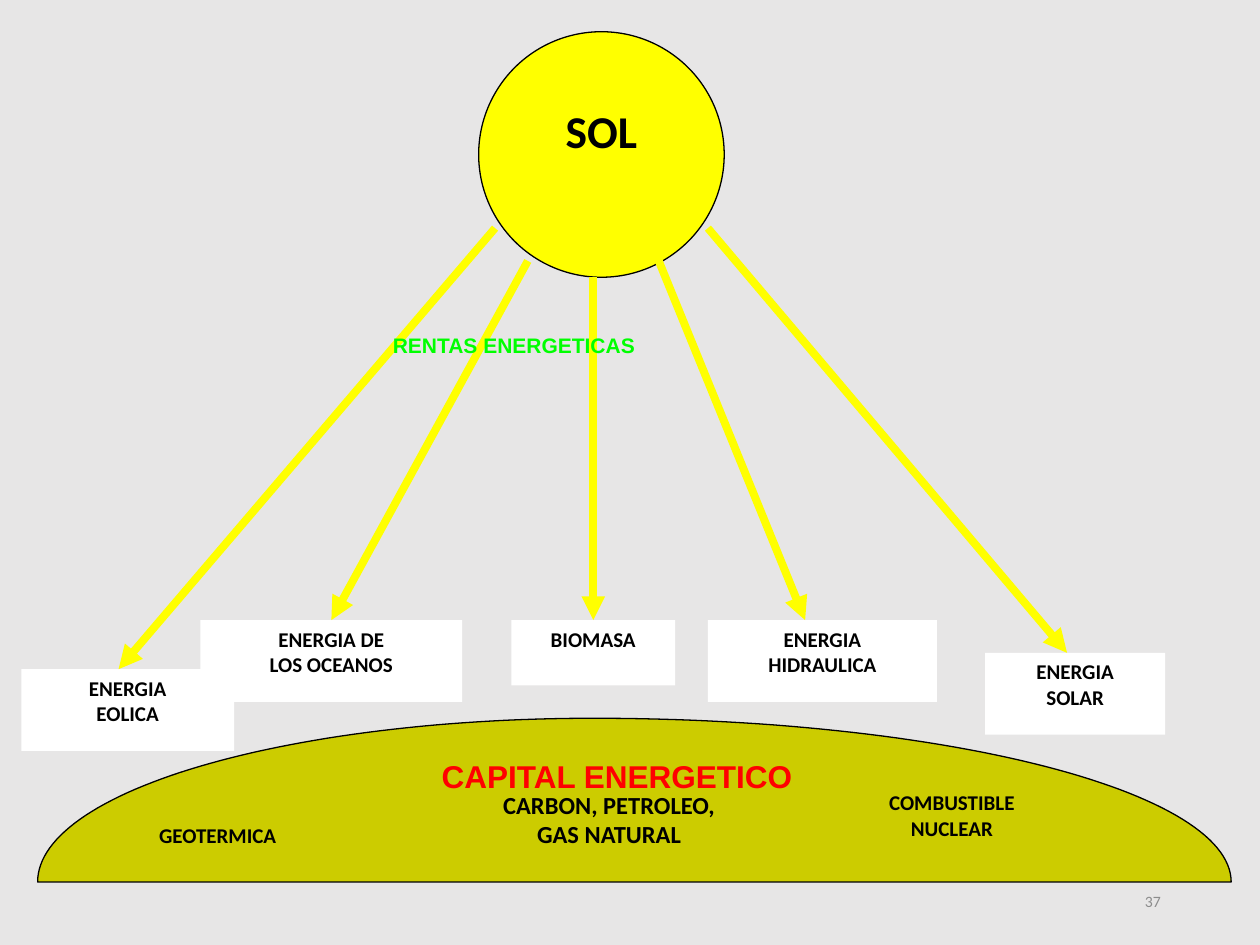
from math import cos, pi, sin

from lxml.etree import SubElement
from pptx import Presentation
from pptx.dml.color import RGBColor
from pptx.enum.shapes import MSO_CONNECTOR, MSO_SHAPE
from pptx.enum.text import MSO_ANCHOR, PP_ALIGN
from pptx.oxml.ns import qn
from pptx.util import Cm, Pt

# All places are in centimetres: left, top, width, height.
SUN = (9.65, 0.64, 4.95, 4.95)
SUN_LABEL = ("SOL", (10.31, 1.96, 3.63, 1.98))
DOME = {"left": 0.76, "apex": 11.96, "right": 24.82, "top": 14.48, "base": 17.78}

# Energy, box, start of the ray, end of the ray (None: middle of the box's top)
INCOMES = [
    ("ENERGIA\nEOLICA", (0.43, 13.49, 4.29, 1.65), (9.98, 4.6), (2.39, 13.49)),
    ("ENERGIA DE\nLOS OCEANOS", (4.04, 12.5, 5.28, 1.65), (10.64, 5.26), None),
    ("BIOMASA", (10.31, 12.5, 3.3, 1.32), (11.96, 5.59), None),
    ("ENERGIA\nHIDRAULICA", (14.27, 12.5, 4.62, 1.65), (13.28, 5.26), (16.23, 12.5)),
    ("ENERGIA\nSOLAR", (19.86, 13.16, 3.63, 1.65), (14.27, 4.6), (21.51, 13.16)),
]

# Text, place, size, font, colour, bold, alignment
CAPITAL = [
    ("CAPITAL ENERGETICO", (7.98, 15.14, 8.92, 0.66), 18, "Arial", "FF0000", True, PP_ALIGN.CENTER),
    ("GEOTERMICA", (1.75, 16.46, 5.28, 0.99), 12, "Calibri", "000000", True, PP_ALIGN.CENTER),
    ("CARBON, PETROLEO,\nGAS NATURAL", (7.67, 15.8, 9.22, 1.98), 14, "Calibri", "000000", True, PP_ALIGN.CENTER),
    ("COMBUSTIBLE\nNUCLEAR", (16.56, 15.8, 5.26, 1.98), 12, "Calibri", "000000", True, PP_ALIGN.CENTER),
]
INCOME_TITLE = ("RENTAS ENERGETICAS", (7.67, 6.58, 9.22, 0.99), 12, "Arial", "00FF00", True, PP_ALIGN.LEFT)
PAGE_NUMBER = ("37", (17.93, 17.65, 5.72, 1.02), 9, "Calibri", "8C8C8C", False, PP_ALIGN.RIGHT)


def paint(fmt, colour):
    """Give a fill a solid colour."""
    fmt.solid()
    fmt.fore_color.rgb = RGBColor.from_string(colour)


def style_shape(shape, fill, line=None):
    shape.shadow.inherit = False
    paint(shape.fill, fill)
    if line:
        paint(shape.line.fill, line)
        shape.line.width = Pt(0.75)
    else:
        shape.line.fill.background()


def write(shape, text, size, font="Calibri", colour="000000", bold=True,
          align=PP_ALIGN.CENTER, anchor=MSO_ANCHOR.TOP):
    frame = shape.text_frame
    frame.text = text
    frame.word_wrap = True
    frame.vertical_anchor = anchor
    for para in frame.paragraphs:
        para.alignment = align
        para.font.size = Pt(size)
        para.font.name = font
        para.font.bold = bold
        paint(para.font.fill, colour)


def add_shape(page, kind, place, fill, line=None):
    shape = page.shapes.add_shape(kind, *map(Cm, place))
    style_shape(shape, fill, line)
    return shape


def add_label(page, text, place, *style, **options):
    box = page.shapes.add_textbox(*map(Cm, place))
    write(box, text, *style, **options)


def add_dome(page, left, apex, right, top, base, steps=120):
    """Draw two quarter ellipses that meet at the apex, closed by the base line."""
    points = []
    for step in range(steps + 1):
        angle = pi * (1 - step / steps)
        radius = apex - left if angle > pi / 2 else right - apex
        points.append((Cm(apex + radius * cos(angle)), Cm(base - (base - top) * sin(angle))))
    builder = page.shapes.build_freeform(*points[0])
    builder.add_line_segments(points[1:], close=True)
    style_shape(builder.convert_to_shape(), "CCCC00", "000000")


def add_ray(page, start, end, box):
    left, top, width, _ = (box.left, box.top, box.width, box.height)
    tip = tuple(map(Cm, end)) if end else (left + width // 2, top)
    ray = page.shapes.add_connector(MSO_CONNECTOR.STRAIGHT, *map(Cm, start), *tip)
    if end is None:
        ray.end_connect(box, 0)
    paint(ray.line.fill, "FFFF00")
    ray.line.width = Pt(4.5)
    SubElement(ray.line._get_or_add_ln(), qn("a:tailEnd"), type="triangle")
    SubElement(ray._element.spPr, qn("a:effectLst"))


def main():
    deck = Presentation()
    deck.slide_width, deck.slide_height = Cm(25.4), Cm(19.05)
    page = deck.slides.add_slide(deck.slide_layouts[6])
    paint(page.background.fill, "E7E6E6")

    add_dome(page, **DOME)
    for label in CAPITAL:
        add_label(page, *label)

    add_shape(page, MSO_SHAPE.OVAL, SUN, "FFFF00", "000000")
    text, place = SUN_LABEL
    write(add_shape(page, MSO_SHAPE.RECTANGLE, place, "FFFF00"), text, 26)

    for text, place, start, end in INCOMES:
        box = add_shape(page, MSO_SHAPE.RECTANGLE, place, "FFFFFF")
        write(box, text, 12)
        add_ray(page, start, end, box)

    add_label(page, *INCOME_TITLE)
    add_label(page, *PAGE_NUMBER, anchor=MSO_ANCHOR.MIDDLE)
    deck.save("out.pptx")


if __name__ == "__main__":
    main()
